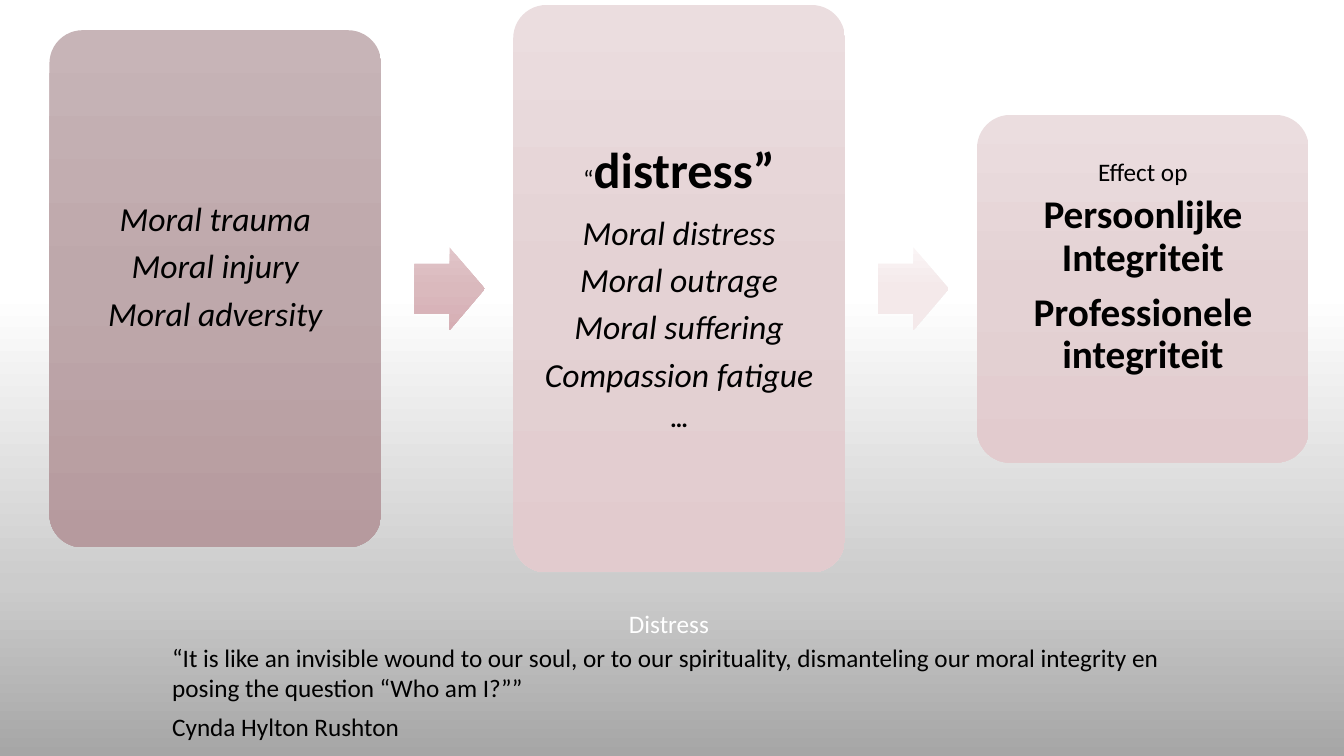
from copy import deepcopy

from pptx import Presentation
from pptx.dml.color import RGBColor
from pptx.enum.shapes import MSO_SHAPE
from pptx.enum.text import MSO_ANCHOR, PP_ALIGN
from pptx.oxml.ns import qn
from pptx.util import Inches, Pt

W, H = 13.33, 7.5
FONT = "Calibri"
C = {"text": "000000", "caption": "FFFFFF", "page": "FFFFFF"}
GRADIENTS = {
    "floor": [(0, "FFFFFF"), (0.63, "CCCCCC"), (1, "A6A6A6")],
    "cause": [(0, "C7B4B7"), (0.5, "BEA8AB"), (1, "B69A9E")],
    "card": [(0, "EBDDDF"), (0.5, "E4D2D4"), (1, "E2CBCE")],
    "arrow": [(0, "E1C5C9"), (0.5, "DAB9BD"), (1, "D6AEB4")],
    "pale arrow": [(0, "FAF4F5"), (0.5, "F4E9EA"), (1, "F3E6E8")],
}
AXIS, CARD_LEFT, CARD_W, PITCH = 2.865, 0.49, 3.29, 4.6
ARROW_W, ARROW_H = 0.7, 0.82
ITEM = {"size": Pt(24), "italic": True}
SMALL = {"size": Pt(18)}
HEAD = {"size": Pt(28), "bold": True}
CARDS = [
    (5.13, "cause", 0.1, 0.51, [[("Moral trauma", ITEM)], [("Moral injury", ITEM)],
                                [("Moral adversity", ITEM)]]),
    (5.63, "card", 0.07, 0.07, [[("“", SMALL), ("distress”", {"size": Pt(36), "bold": True})],
                                [("Moral distress", ITEM)], [("Moral outrage", ITEM)],
                                [("Moral suffering", ITEM)], [("Compassion fatigue", ITEM)],
                                [("…", {"size": Pt(18), "bold": True})]]),
    (3.45, "card", 0.07, 0.48, [[("Effect op", SMALL)], [("Persoonlijke Integriteit", HEAD)],
                                [("Professionele integriteit", HEAD)]]),
]
ARROWS = ["arrow", "pale arrow"]
QUOTE = [
    "“It is like an invisible wound to our soul, or to our spirituality, dismanteling "
    "our moral integrity en posing the question “Who am I?””",
    "Cynda Hylton Rushton",
]


def set_all(obj, values):
    """Set every attribute in a dict of format values."""
    for name, value in values.items():
        setattr(obj, name, value)


def add_block(s, kind, box, gradient, adjustments=()):
    """Add a borderless preset shape with a vertical gradient."""
    sp = s.shapes.add_shape(kind, *map(Inches, box))
    sp.shadow.inherit = False
    sp.line.fill.background()
    for i, value in enumerate(adjustments):
        sp.adjustments[i] = value
    sp.fill.gradient()
    sp.fill.gradient_angle = 270
    stops = sp._element.spPr.find(qn("a:gradFill")).find(qn("a:gsLst"))
    stops.append(deepcopy(stops[0]))
    for stop, (position, color) in zip(sp.fill.gradient_stops, GRADIENTS[gradient]):
        stop.position = position
        stop.color.rgb = RGBColor.from_string(color)
    return sp


def write(tf, paragraphs, layout, color="text"):
    """Fill a text frame with paragraphs, each a list of text and font pairs."""
    tf.word_wrap = True
    for i, runs in enumerate(paragraphs):
        p = tf.paragraphs[0] if i == 0 else tf.add_paragraph()
        set_all(p, layout)
        if "space_after" not in layout:
            p.space_after = Pt(round(0.33 * max(font["size"].pt for _, font in runs), 1))
        for text, font in runs:
            r = p.add_run()
            r.text = text
            set_all(r.font, {"name": FONT, **font})
            r.font.color.rgb = RGBColor.from_string(C[color])


def add_background(s):
    """Paint the page and the grey floor in its lower part."""
    s.background.fill.solid()
    s.background.fill.fore_color.rgb = RGBColor.from_string(C["page"])
    add_block(s, MSO_SHAPE.RECTANGLE, (0, 2.9, W, H - 2.9), "floor")


def add_process(s, left, axis):
    """Place the cards and the arrows between them along a horizontal axis."""
    for i, (height, gradient, inset, bottom, paragraphs) in enumerate(CARDS):
        box = (left + i * PITCH, axis - height / 2, CARD_W, height)
        tf = add_block(s, MSO_SHAPE.ROUNDED_RECTANGLE, box, gradient, [0.1]).text_frame
        set_all(tf, {"margin_left": Inches(inset), "margin_right": Inches(inset),
                     "margin_top": Inches(inset), "margin_bottom": Inches(bottom),
                     "vertical_anchor": MSO_ANCHOR.MIDDLE})
        write(tf, paragraphs, {"alignment": PP_ALIGN.CENTER, "line_spacing": 0.9})
    for i, gradient in enumerate(ARROWS):
        box = (left + CARD_W + 0.33 + i * PITCH, axis - ARROW_H / 2, ARROW_W, ARROW_H)
        add_block(s, MSO_SHAPE.RIGHT_ARROW, box, gradient, [0.6, 0.5])


def add_quote(s, left, top, width):
    """Place the caption and the quotation below it."""
    caption = s.shapes.add_textbox(*map(Inches, (left + 0.82, top, 8.41, 0.45)))
    write(caption.text_frame, [[("Distress", SMALL)]],
          {"alignment": PP_ALIGN.CENTER, "line_spacing": 1.2, "space_after": Pt(0)}, "caption")
    quote = s.shapes.add_textbox(*map(Inches, (left, top + 0.39, width, H - top - 0.39)))
    write(quote.text_frame, [[(text, SMALL)] for text in QUOTE], {"space_after": Pt(6)})


def main():
    """Build the slide and save it."""
    prs = Presentation()
    set_all(prs, {"slide_width": Inches(W), "slide_height": Inches(H)})
    s = prs.slides.add_slide(prs.slide_layouts[6])
    add_background(s)
    add_process(s, CARD_LEFT, AXIS)
    add_quote(s, 1.61, 5.93, 10.6)
    prs.save("out.pptx")


if __name__ == "__main__":
    main()
